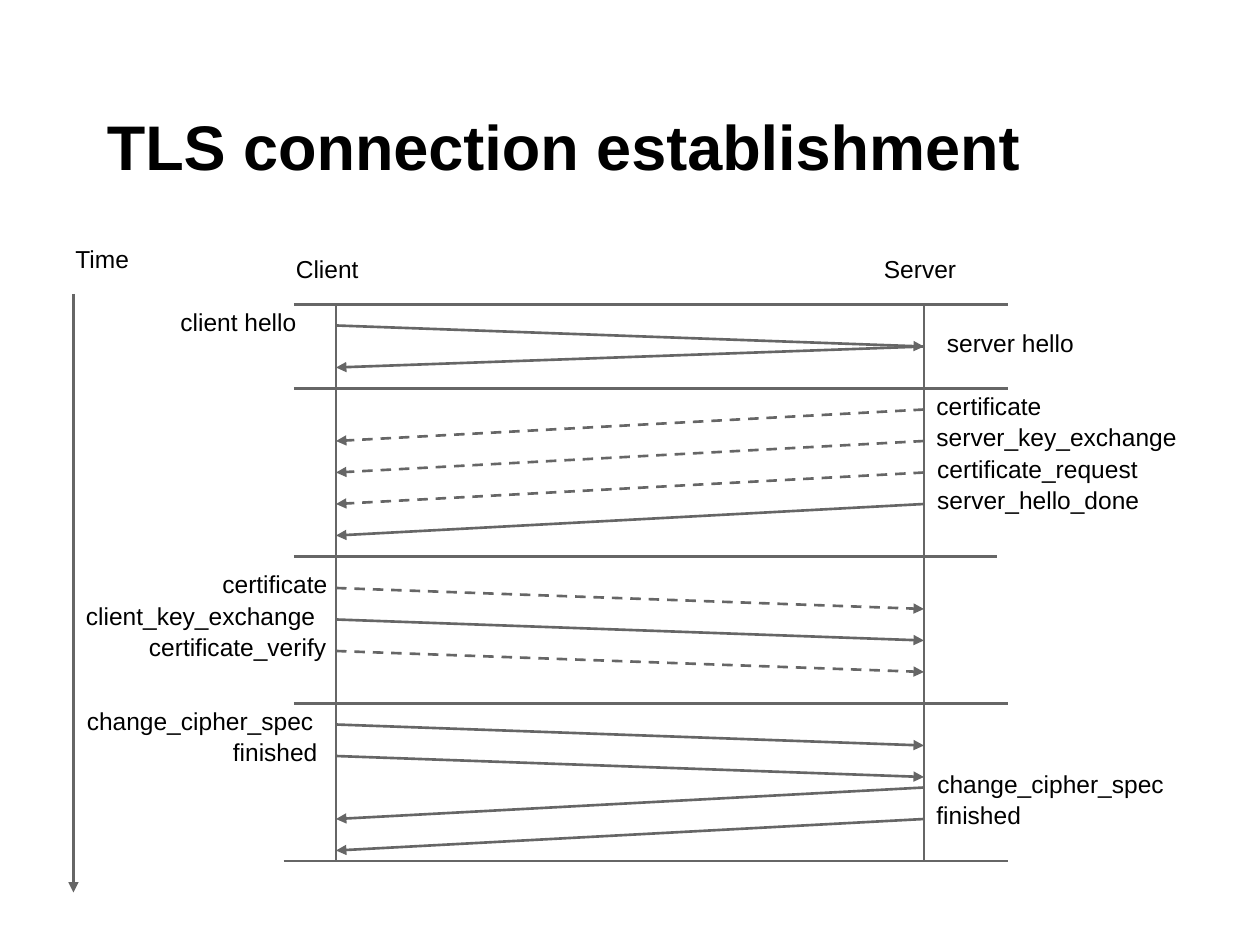
from dataclasses import dataclass

from pptx import Presentation, util as u
from pptx.dml.color import RGBColor
from pptx.enum import dml, shapes, text
from pptx.oxml.ns import qn
from lxml import etree

COLORS = {"line": "666666", "text": "000000"}
FONT = "Arial"
CLIENT_X, SERVER_X = 192, 528
INSET = 7.2
LABEL_RISE = 18  # label box top above the start of its arrow


@dataclass
class Message:
    label: str
    left: float
    width: float
    height: float
    y: float
    drop: float = 12
    from_client: bool = True
    dashed: bool = False


@dataclass
class Heading:
    label: str
    left: float
    top: float
    width: float


@dataclass
class Divider:
    y: float
    left: float = 168
    right: float = 576


HEADINGS = [
    Heading("Client", 162, 138, 66),
    Heading("Server", 498, 138, 60),
    Heading("Time", 36, 132, 60),
]

DIVIDERS = [Divider(174), Divider(222), Divider(318, right=570),
            Divider(402), Divider(492, left=162)]

MESSAGES = [
    Message("client hello", 96, 90, 36, 186),
    Message("server hello", 534, 90, 36, 198, from_client=False),
    Message("certificate", 528, 84, 24, 234, 18, False, True),
    Message("server_key_exchange", 528, 168, 24, 252, 18, False, True),
    Message("certificate_request", 528.5, 143.5, 30, 270, 18, False, True),
    Message("server_hello_done", 528.5, 144, 24, 288, 18, False),
    Message("certificate", 120, 78, 18, 336, dashed=True),
    Message("client_key_exchange", 42, 156, 24, 354),
    Message("certificate_verify", 78, 132, 18, 372, dashed=True),
    Message("change_cipher_spec", 42.5, 162, 18, 414),
    Message("finished", 126, 78, 18, 432),
    Message("change_cipher_spec", 528.5, 161.5, 18, 450, 18, False),
    Message("finished", 528, 108, 18, 468, 18, False),
]


def add_line(s, x1: float, y1: float, x2: float, y2: float,
             arrow: bool = False, dashed: bool = False) -> None:
    sp = s.shapes.add_connector(shapes.MSO_CONNECTOR.STRAIGHT,
                                *map(u.Pt, (x1, y1, x2, y2)))
    sp.line.color.rgb = RGBColor.from_string(COLORS["line"])
    sp.line.width = u.Pt(1.5)
    if dashed:
        sp.line.dash_style = dml.MSO_LINE.DASH
    if arrow:
        etree.SubElement(sp.line._get_or_add_ln(), qn("a:tailEnd"), type="triangle")
    etree.SubElement(sp._element.spPr, qn("a:effectLst"))


def add_text(s, label: str, left: float, top: float, width: float, height: float,
             size: float = 14, bold: bool = False,
             anchor=text.MSO_ANCHOR.TOP, indent: float = 0) -> None:
    sp = s.shapes.add_textbox(*map(u.Pt, (left, top, width, height)))
    tf = sp.text_frame
    frame_format = {"word_wrap": True, "vertical_anchor": anchor,
                    "auto_size": text.MSO_AUTO_SIZE.SHAPE_TO_FIT_TEXT}
    frame_format.update({f"margin_{side}": u.Pt(INSET)
                         for side in ("left", "top", "right", "bottom")})
    for name, value in frame_format.items():
        setattr(tf, name, value)
    p = tf.paragraphs[0]
    if indent:
        p._p.get_or_add_pPr().set("indent", str(u.Pt(indent)))
    r = p.add_run()
    r.text = label
    for name, value in {"name": FONT, "size": u.Pt(size), "bold": bold}.items():
        setattr(r.font, name, value)
    r.font.color.rgb = RGBColor.from_string(COLORS["text"])


def add_message(s, m: Message) -> None:
    """Draw the arrow between the two lifelines and the label at its start."""
    start, end = (CLIENT_X, SERVER_X) if m.from_client else (SERVER_X, CLIENT_X)
    add_line(s, start, m.y, end, m.y + m.drop, arrow=True, dashed=m.dashed)
    add_text(s, m.label, m.left, m.y - LABEL_RISE, m.width, m.height)


def main() -> None:
    prs = Presentation()
    prs.slide_width, prs.slide_height = u.Pt(720), u.Pt(540)
    s = prs.slides.add_slide(prs.slide_layouts[6])

    add_text(s, "TLS connection establishment", 36, 21.6, 648, 90, size=36,
             bold=True, anchor=text.MSO_ANCHOR.BOTTOM, indent=18)
    add_line(s, 42, 168, 42, 510, arrow=True)
    for d in DIVIDERS:
        add_line(s, d.left, d.y, d.right, d.y)
    for x in (CLIENT_X, SERVER_X):
        add_line(s, x, DIVIDERS[0].y, x, DIVIDERS[-1].y)
    for m in MESSAGES:
        add_message(s, m)
    for h in HEADINGS:
        add_text(s, h.label, h.left, h.top, h.width, 30)

    prs.save("out.pptx")


if __name__ == "__main__":
    main()
